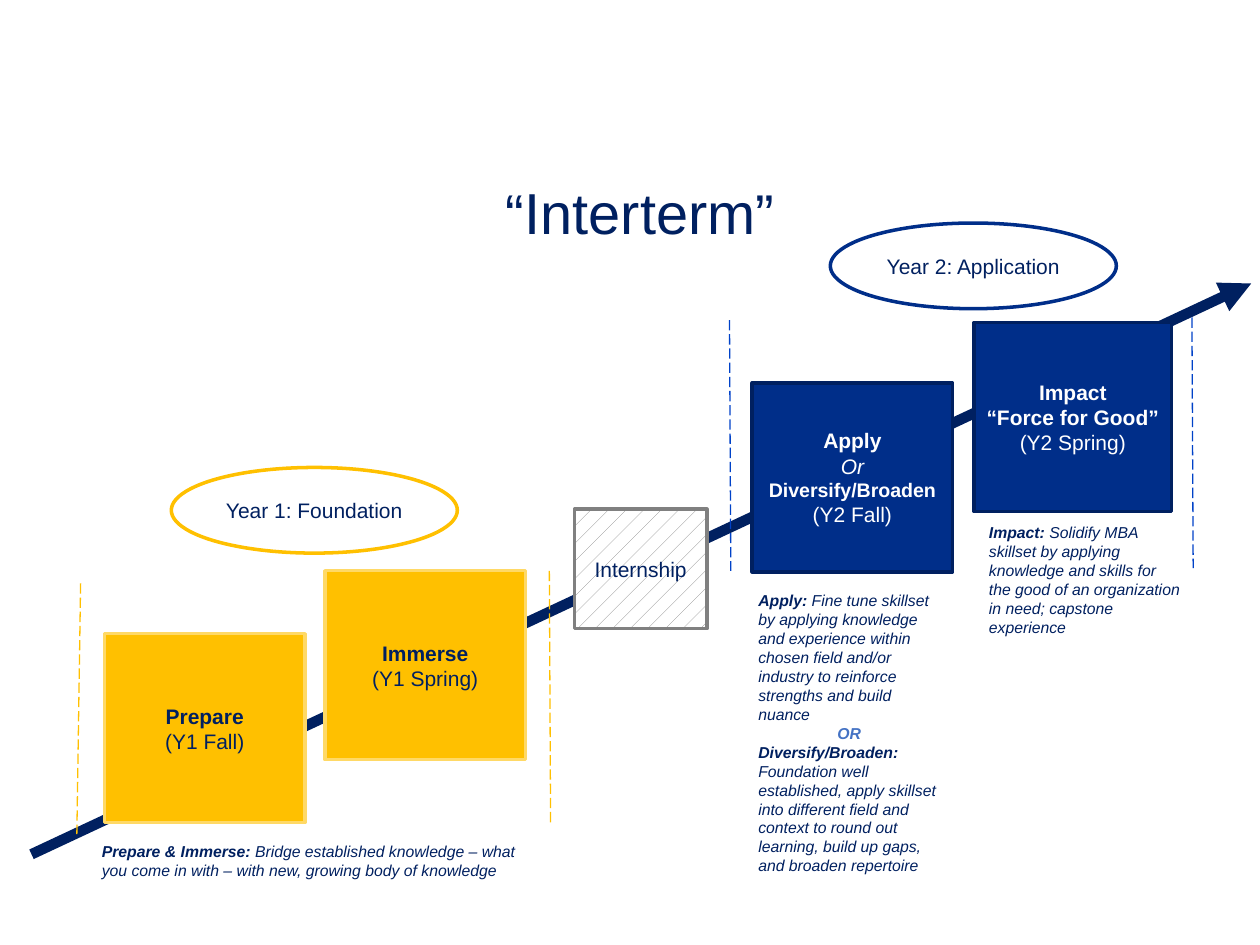
from dataclasses import dataclass
from typing import Optional

import pptx
import pptx.dml.color
import pptx.enum.dml
import pptx.enum.shapes
import pptx.enum.text
import pptx.oxml
import pptx.oxml.ns
import pptx.util

RGBColor = pptx.dml.color.RGBColor
Shape = pptx.enum.shapes.MSO_SHAPE
Align = pptx.enum.text.PP_ALIGN
Anchor = pptx.enum.text.MSO_ANCHOR

NAVY = RGBColor(0x00, 0x20, 0x60)
ROYAL = RGBColor(0x00, 0x2E, 0x89)
BRIGHT_BLUE = RGBColor(0x00, 0x42, 0xC8)
SOFT_BLUE = RGBColor(0x44, 0x72, 0xC4)
GOLD = RGBColor(0xFF, 0xC0, 0x00)
PALE_GOLD = RGBColor(0xFF, 0xD9, 0x66)
GRAY = RGBColor(0x80, 0x80, 0x80)
WHITE = RGBColor(0xFF, 0xFF, 0xFF)

# The slide is a grid of 100 columns and 75 rows
COLUMNS, ROWS = 100, 75
presentation = pptx.Presentation()
presentation.slide_width = pptx.util.Inches(10)
presentation.slide_height = pptx.util.Inches(7.5)
slide = presentation.slides.add_slide(presentation.slide_layouts[6])


@dataclass
class Area:
    column: float
    row: float
    columns: float
    rows: float

    def lengths(self) -> tuple:
        return (across(self.column), down(self.row),
                across(self.columns), down(self.rows))


@dataclass
class Run:
    text: str
    bold: bool = False
    italic: bool = False
    size: Optional[float] = None
    color: Optional[RGBColor] = None


@dataclass
class Paragraph:
    runs: list
    align: Align = Align.CENTER


@dataclass
class Block:
    area: Area
    paragraphs: list
    line: RGBColor
    fill: Optional[RGBColor] = None
    color: RGBColor = NAVY
    kind: Shape = Shape.RECTANGLE


@dataclass
class Note:
    area: Area
    paragraphs: list


@dataclass
class Line:
    start: tuple
    end: tuple
    color: RGBColor
    width: float = 0.75
    ending: str = '<a:prstDash {} val="lgDash"/>'


def across(columns: float) -> int:
    return round(presentation.slide_width * columns / COLUMNS)


def down(rows: float) -> int:
    return round(presentation.slide_height * rows / ROWS)


def write(text_frame, paragraphs: list, size: float, color: RGBColor,
          anchor: Anchor, side_margin: float) -> None:
    text_frame.word_wrap = True
    text_frame.vertical_anchor = anchor
    text_frame.margin_right = pptx.util.Inches(side_margin)
    for index, content in enumerate(paragraphs):
        paragraph = text_frame.paragraphs[0] if index == 0 else text_frame.add_paragraph()
        paragraph.alignment = content.align
        for item in content.runs:
            run = paragraph.add_run()
            run.text = item.text
            run.font.name = "Arial"
            run.font.size = pptx.util.Pt(item.size or size)
            run.font.bold = item.bold
            run.font.italic = item.italic
            run.font.color.rgb = item.color or color


def draw_block(block: Block):
    shape = slide.shapes.add_shape(block.kind, *block.area.lengths())
    shape.shadow.inherit = False
    shape.line.color.rgb = block.line
    shape.line.width = pptx.util.Pt(2)
    if block.fill is None:
        shape.fill.background()
    else:
        shape.fill.solid()
        shape.fill.fore_color.rgb = block.fill
    shape.text_frame.margin_left = pptx.util.Inches(0.08)
    write(shape.text_frame, block.paragraphs, 12, block.color, Anchor.MIDDLE, 0.08)
    return shape


def draw_note(note: Note) -> None:
    box = slide.shapes.add_textbox(*note.area.lengths())
    write(box.text_frame, note.paragraphs, 9, NAVY, Anchor.TOP, 0.09)


def draw_line(line: Line) -> None:
    connector = slide.shapes.add_connector(
        pptx.enum.shapes.MSO_CONNECTOR.STRAIGHT,
        across(line.start[0]), down(line.start[1]), across(line.end[0]), down(line.end[1]))
    connector.line.color.rgb = line.color
    connector.line.width = pptx.util.Pt(line.width)
    namespace = pptx.oxml.ns.nsdecls("a")
    connector.line._get_or_add_ln().append(pptx.oxml.parse_xml(line.ending.format(namespace)))
    connector._element.spPr.append(pptx.oxml.parse_xml(f"<a:effectLst {namespace}/>"))


def centered(*runs: Run) -> list:
    return [Paragraph([run]) for run in runs]


def explained(term: str, explanation: str) -> Paragraph:
    return Paragraph([Run(term, bold=True, italic=True), Run(explanation, italic=True)],
                     Align.LEFT)


# Rising arrow behind the steps
draw_line(Line((2.5, 67.8), (99.3, 22.5), NAVY, 6, '<a:tailEnd {} type="triangle"/>'))

# Term steps and year ovals
blocks = [
    Block(Area(8.3, 50.3, 15.9, 15), centered(Run("Prepare", bold=True), Run("(Y1 Fall)")),
          PALE_GOLD, GOLD),
    Block(Area(25.8, 45.3, 15.9, 15), centered(Run("Immerse", bold=True), Run("(Y1 Spring)")),
          PALE_GOLD, GOLD),
    Block(Area(59.7, 30.4, 15.9, 15),
          centered(Run("Apply", bold=True), Run("Or", italic=True),
                   Run("Diversify/Broaden", bold=True, size=11.2), Run("(Y2 Fall)")),
          NAVY, ROYAL, WHITE),
    Block(Area(77.3, 25.6, 15.7, 15),
          centered(Run("Impact", bold=True), Run("“Force for Good”", bold=True),
                   Run("(Y2 Spring)")),
          NAVY, ROYAL, WHITE),
    Block(Area(13.6, 37.1, 22.7, 6.8), centered(Run("Year 1: Foundation")), GOLD,
          kind=Shape.OVAL),
    Block(Area(65.9, 17.7, 22.7, 6.8), centered(Run("Year 2: Application")), ROYAL,
          kind=Shape.OVAL),
]
for block in blocks:
    draw_block(block)

# Patterned internship step between the years
internship = draw_block(Block(Area(45.6, 40.4, 10.5, 9.5), centered(Run("Internship")), GRAY))
internship.fill.patterned()
internship.fill.pattern = pptx.enum.dml.MSO_PATTERN.PERCENT_5
internship.fill.fore_color.rgb = GRAY
internship.fill.back_color.rgb = WHITE

# Dashed limits of each year
for limit in [
    Line((6.4, 46.3), (6.1, 66.2), GOLD),
    Line((43.6, 45.3), (43.7, 65.3), GOLD),
    Line((57.9, 25.4), (58, 45.3), BRIGHT_BLUE),
    Line((94.6, 25.2), (94.7, 45.1), BRIGHT_BLUE),
]:
    draw_line(limit)

# Explanations under the steps
for note in [
    Note(Area(7.1, 66.3, 36.5, 4),
         [explained("Prepare & Immerse: ", "Bridge established knowledge – what you come in "
                    "with – with new, growing body of knowledge")]),
    Note(Area(59.2, 46.4, 16.3, 23.7),
         [explained("Apply:", " Fine tune skillset by applying knowledge and experience within "
                    "chosen field and/or industry to reinforce strengths and build nuance"),
          Paragraph([Run("OR", bold=True, italic=True, color=SOFT_BLUE)]),
          explained("Diversify/Broaden: ", "Foundation well established, apply skillset into "
                    "different field and context to round out learning, build up gaps, "
                    "and broaden repertoire")]),
    Note(Area(77.5, 41, 17.2, 10.1),
         [explained("Impact: ", "Solidify MBA skillset by applying knowledge and skills for "
                    "the good of an organization in need; capstone experience")]),
]:
    draw_note(note)

# Title
title = slide.shapes.add_textbox(*Area(4.2, 12.6, 93.2, 8.4).lengths())
write(title.text_frame, [Paragraph([Run("“"), Run("Interterm", size=33), Run("”")])],
      32, NAVY, Anchor.MIDDLE, 0.1)

presentation.save("out.pptx")
